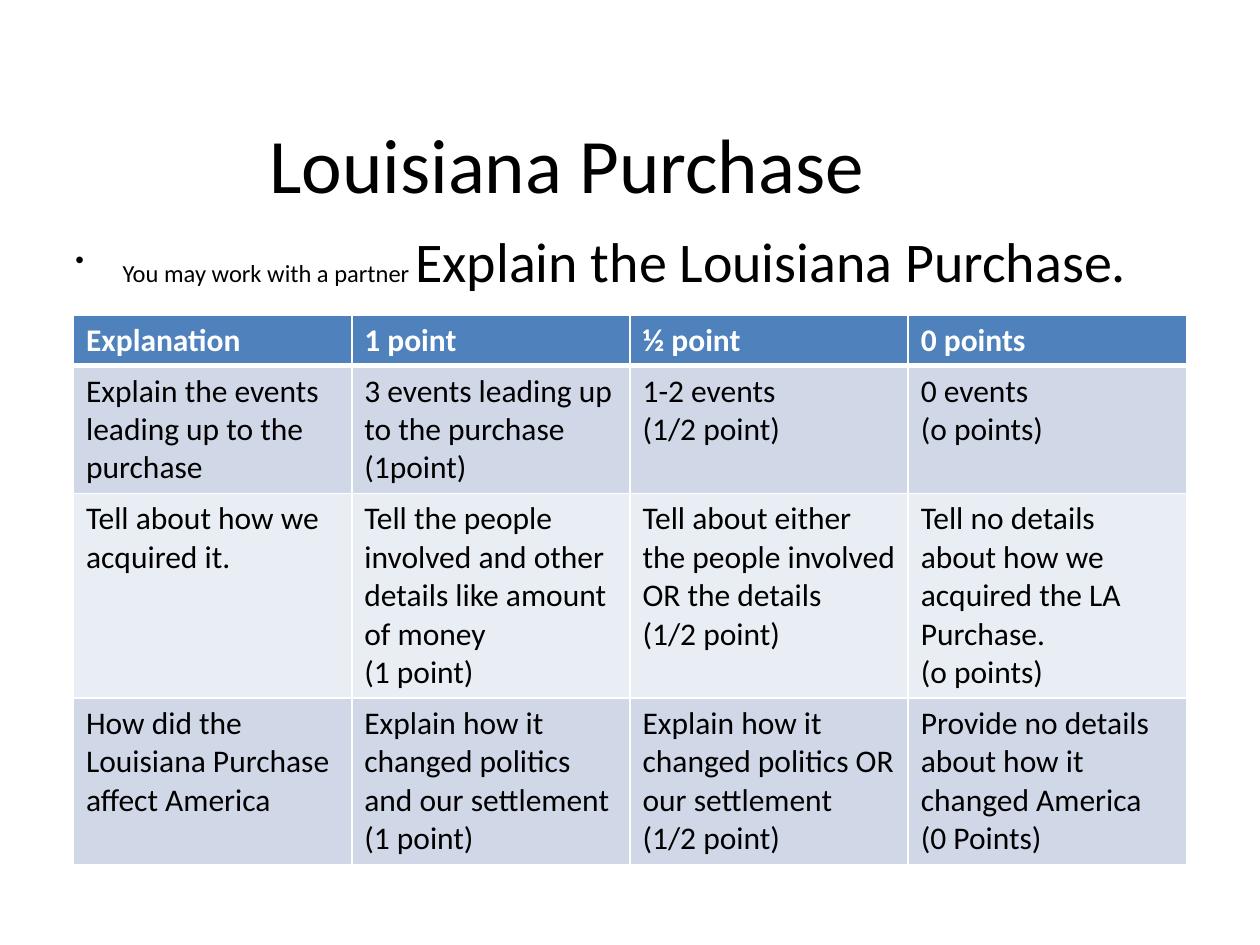
from lxml import etree
from pptx import Presentation
from pptx import util as u
from pptx.dml import color
from pptx.enum import text
from pptx.oxml import ns

COLOURS = {"ink": "000000", "paper": "FFFFFF", "header": "4F81BD",
           "odd": "D0D8E8", "even": "E9EDF4"}
RUBRIC = [
    ["Explanation", "1 point", "½ point", "0 points"],
    ["Explain the events leading up to the purchase",
     "3 events leading up to the purchase\n(1point)",
     "1-2 events\n(1/2 point)",
     "0 events\n(o points)"],
    ["Tell about how we acquired it.",
     "Tell the people involved and other details like amount of money\n(1 point)",
     "Tell about either the people involved OR the details\n(1/2 point)",
     "Tell no details about how we acquired the LA Purchase.\n(o points)"],
    ["How did the Louisiana Purchase affect America",
     "Explain how it changed politics and our settlement\n(1 point)",
     "Explain how it changed politics OR our settlement\n(1/2 point)",
     "Provide no details about how it changed America\n(0 Points)"],
]


class Slide:
    """Holds the style and the current page, and draws each kind of element."""

    def __init__(self, page, font="Calibri"):
        self.page = page
        self.font = font

    def span(self, para, words, size, colour="ink", bold=False):
        span = para.add_run()
        span.text = words
        span.font.name = self.font
        span.font.size = u.Pt(size)
        span.font.bold = bold
        span.font.color.rgb = color.RGBColor.from_string(COLOURS[colour])

    def box(self, area, spans, anchor=text.MSO_ANCHOR.TOP, align=text.PP_ALIGN.LEFT):
        frame = self.page.shapes.add_textbox(*map(u.Pt, area)).text_frame
        frame.word_wrap = True
        frame.vertical_anchor = anchor
        para = frame.paragraphs[0]
        para.alignment = align
        for words, size in spans:
            self.span(para, words, size)
        return para

    def bullet(self, para, indent):
        props = para._p.get_or_add_pPr()
        props.set("marL", str(u.Pt(indent)))
        props.set("indent", str(-u.Pt(indent)))
        etree.SubElement(props, ns.qn("a:buFont"), typeface="Arial")
        etree.SubElement(props, ns.qn("a:buChar"), char="•")

    def border(self, cell, side, width):
        line = etree.SubElement(cell._tc.get_or_add_tcPr(), ns.qn(f"a:ln{side}"),
                                w=str(u.Pt(width)))
        fill = etree.SubElement(line, ns.qn("a:solidFill"))
        etree.SubElement(fill, ns.qn("a:srgbClr"), val=COLOURS["paper"])

    def cell(self, cell, words, row):
        header = row == 0
        for side in "LRTB":
            thick = (row, side) in ((0, "B"), (1, "T"))
            self.border(cell, side, 3 if thick else 1)
        cell.fill.solid()
        shade = "header" if header else "odd" if row % 2 else "even"
        cell.fill.fore_color.rgb = color.RGBColor.from_string(COLOURS[shade])
        frame = cell.text_frame
        for index, line in enumerate(words.split("\n")):
            para = frame.add_paragraph() if index else frame.paragraphs[0]
            self.span(para, line, 18, "paper" if header else "ink", header)

    def table(self, area, rows, heights):
        grid = self.page.shapes.add_table(len(rows), len(rows[0]),
                                          *map(u.Pt, area)).table
        for row, (values, height) in enumerate(zip(rows, heights)):
            grid.rows[row].height = u.Pt(height)
            for column, words in enumerate(values):
                self.cell(grid.cell(row, column), words, row)


def main():
    deck = Presentation()
    deck.slide_width, deck.slide_height = u.Pt(720), u.Pt(540)
    slide = Slide(deck.slides.add_slide(deck.slide_layouts[6]))
    slide.box((0, 48, 648, 90), [("Louisiana Purchase", 44)],
              text.MSO_ANCHOR.MIDDLE, text.PP_ALIGN.CENTER)
    task = slide.box((36, 126, 648, 356.4),
                     [("You may work with a partner ", 14),
                      ("Explain the Louisiana Purchase.", 32)])
    task.space_before = u.Pt(2)
    slide.bullet(task, 27)
    heights = [29, 73, 117, 95]
    slide.table((42, 180, 636, sum(heights)), RUBRIC, heights)
    deck.save("out.pptx")


if __name__ == "__main__":
    main()
